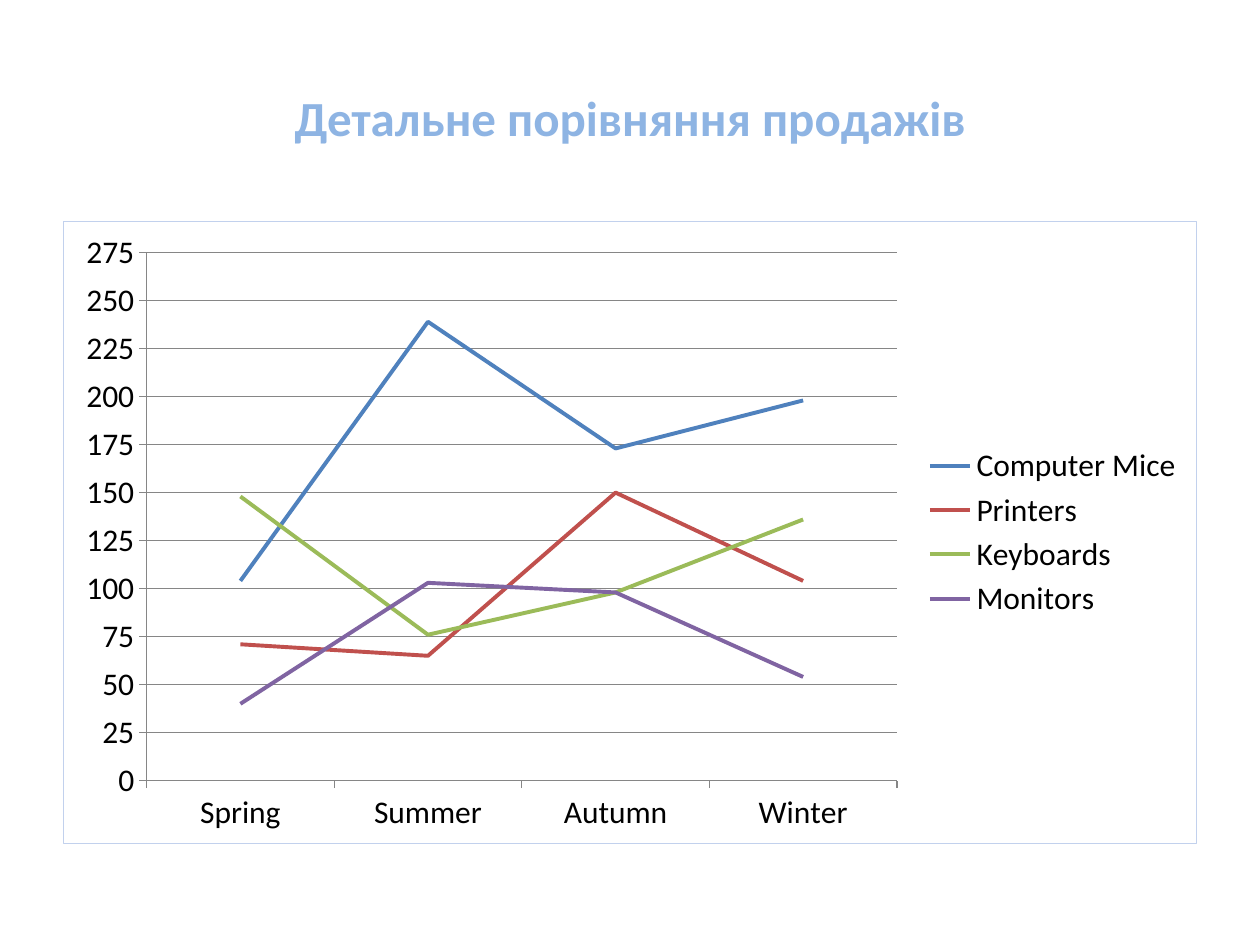
from dataclasses import dataclass

from lxml import etree
from pptx import Presentation
from pptx.chart.data import CategoryChartData as ChartData
from pptx.dml.color import RGBColor
from pptx.enum.chart import XL_CHART_TYPE as Kind
from pptx.enum.chart import XL_LEGEND_POSITION as Side
from pptx.enum.chart import XL_MARKER_STYLE as Mark
from pptx.enum.chart import XL_TICK_MARK as Tick
from pptx.enum.text import MSO_ANCHOR as Anchor
from pptx.enum.text import PP_ALIGN as Align
from pptx.oxml import parse_xml
from pptx.oxml.ns import nsdecls, qn
from pptx.util import Inches, Pt

FONT = "Calibri"
SKY = RGBColor(0x8E, 0xB4, 0xE3)
BLACK = RGBColor(0, 0, 0)
GRAY = RGBColor(0x86, 0x86, 0x86)
FRAME = RGBColor(0xC2, 0xD1, 0xED)
BLUE = RGBColor(0x4F, 0x81, 0xBD)
RED = RGBColor(0xC0, 0x50, 0x4D)
GREEN = RGBColor(0x9B, 0xBB, 0x59)
VIOLET = RGBColor(0x80, 0x64, 0xA2)


@dataclass
class Goods:
    name: str
    sales: tuple[int, ...]
    color: RGBColor


SEASONS = ("Spring", "Summer", "Autumn", "Winter")
GOODS = (
    Goods("Computer Mice", (104, 239, 173, 198), BLUE),
    Goods("Printers", (71, 65, 150, 104), RED),
    Goods("Keyboards", (148, 76, 98, 136), GREEN),
    Goods("Monitors", (40, 103, 98, 54), VIOLET),
)


def add_title(slide, text: str) -> None:
    box = slide.shapes.add_textbox(Inches(0.5), Inches(0.3), Inches(9), Inches(1.25))
    frame = box.text_frame
    frame.word_wrap = True
    frame.vertical_anchor = Anchor.MIDDLE
    para = frame.paragraphs[0]
    para.alignment = Align.CENTER
    run = para.add_run()
    run.text = text
    font = run.font
    font.name, font.size, font.bold = FONT, Pt(28), True
    font.color.rgb = SKY


def set_line(line, color: RGBColor, width: float) -> None:
    line.color.rgb = color
    line.width = Pt(width)


def add_frame(chart, color: RGBColor, width: float) -> None:
    """Outline the whole chart area."""
    props = parse_xml(
        f'<c:spPr {nsdecls("c", "a")}><a:noFill/><a:ln w="{Pt(width)}">'
        f'<a:solidFill><a:srgbClr val="{color}"/></a:solidFill></a:ln></c:spPr>'
    )
    chart.element.find(qn("c:chart")).addnext(props)


def add_sales(slide) -> None:
    data = ChartData()
    data.categories = SEASONS
    for item in GOODS:
        data.add_series(item.name, item.sales)
    chart = slide.shapes.add_chart(
        Kind.LINE, Inches(0.5), Inches(1.75), Inches(9), Inches(4.95), data
    ).chart
    chart.has_title = False
    chart.font.name, chart.font.size = FONT, Pt(18)
    chart.font.color.rgb = BLACK
    add_frame(chart, FRAME, 0.75)

    # Legend
    chart.has_legend = True
    chart.legend.position = Side.RIGHT
    chart.legend.include_in_layout = False

    # Axes
    for axis in (chart.category_axis, chart.value_axis):
        axis.major_tick_mark = Tick.OUTSIDE
        axis.minor_tick_mark = Tick.NONE
        set_line(axis.format.line, GRAY, 0.75)
    scale = chart.value_axis
    scale.minimum_scale, scale.maximum_scale = 0, 275
    scale.major_unit = 25
    scale.has_major_gridlines = True
    set_line(scale.major_gridlines.format.line, GRAY, 0.75)

    # Lines
    plot = chart.plots[0]
    plot.vary_by_categories = False
    for line, item in zip(plot.series, GOODS):
        line.smooth = False
        line.marker.style = Mark.NONE
        set_line(line.format.line, item.color, 2.25)


def main() -> None:
    deck = Presentation()
    deck.slide_width, deck.slide_height = Inches(10), Inches(7.5)
    slide = deck.slides.add_slide(deck.slide_layouts[6])
    add_title(slide, "Детальне порівняння продажів")
    add_sales(slide)
    deck.save("out.pptx")


if __name__ == "__main__":
    main()
